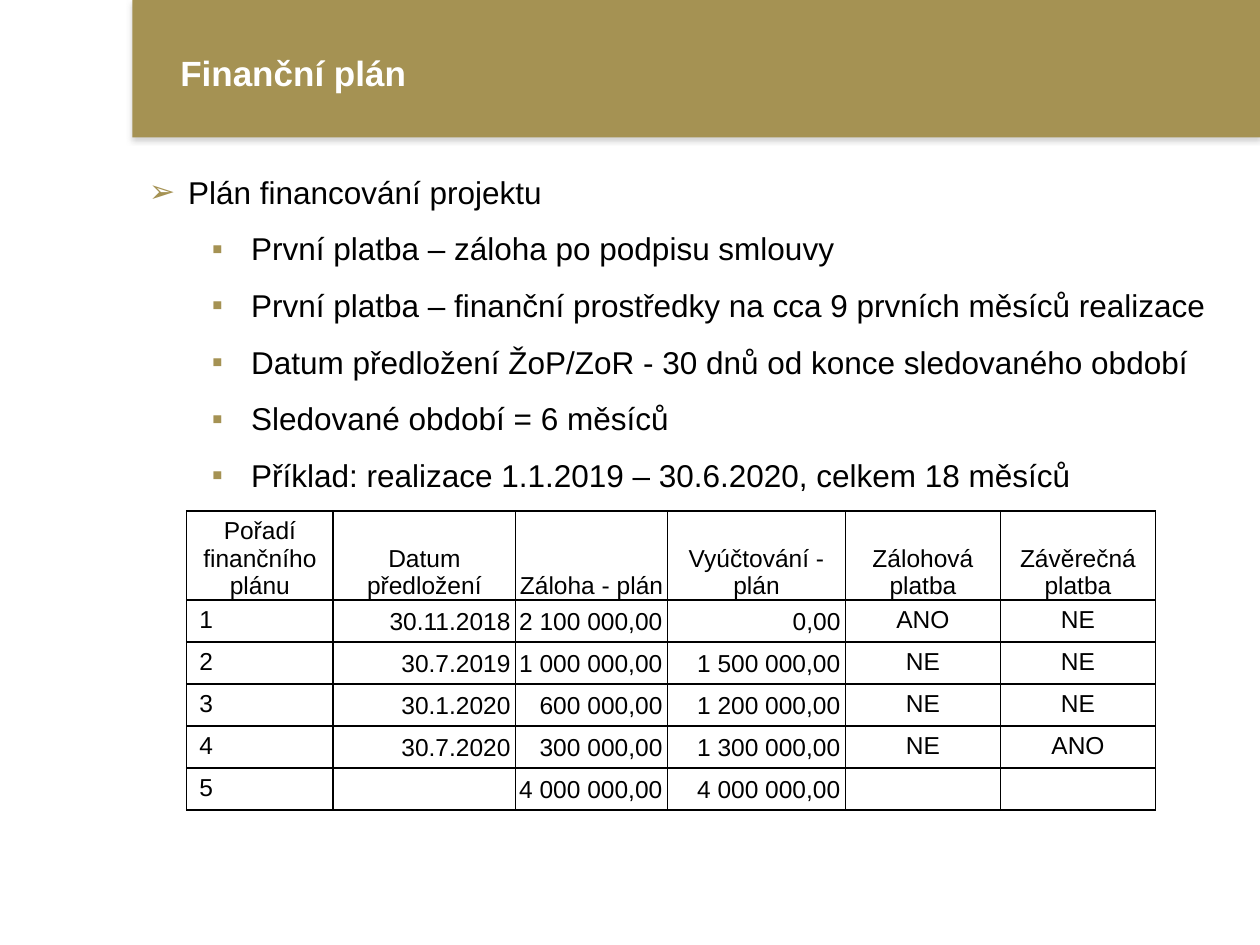
"""Build the financial plan slide with its payment schedule."""
from dataclasses import dataclass

from lxml.etree import SubElement
from pptx import Presentation
from pptx.dml.color import RGBColor
from pptx.enum.shapes import MSO_SHAPE as Shape
from pptx.enum.text import MSO_ANCHOR as Anchor, MSO_AUTO_SIZE as AutoSize, PP_ALIGN as Align
from pptx.oxml.ns import qn
from pptx.util import Pt

GOLD, WHITE, BLACK, GREY = "A59253", "FFFFFF", "000000", "808080"
FONT = "Arial"


@dataclass(frozen=True)
class Bullet:
    text: str
    symbol: str = "▪"
    level: int = 1
    indent: float = 58.5
    spacing: float = 1.5


@dataclass(frozen=True)
class CellStyle:
    align: Align
    anchor: Anchor
    margins: tuple[float, float, float, float]


HEADER = CellStyle(Align.CENTER, Anchor.BOTTOM, (0, 0, 0, 0))
ORDER = CellStyle(Align.LEFT, Anchor.TOP, (7.2, 3.6, 7.2, 3.6))
FLAG = CellStyle(Align.CENTER, Anchor.TOP, (7.2, 3.6, 7.2, 3.6))
NUMBER = CellStyle(Align.RIGHT, Anchor.MIDDLE, (0.72, 0.72, 2.88, 0))
COLUMN_STYLES = (ORDER, NUMBER, NUMBER, NUMBER, FLAG, FLAG)
COLUMN_WIDTHS = (83.7, 104.3, 86.8, 101.7, 88.6, 88.6)
HEADER_HEIGHT, ROW_HEIGHT = 51, 24

BULLETS = (
    Bullet("Plán financování projektu", "➢", 0, 22.5, 1.0),
    Bullet("První platba – záloha po podpisu smlouvy"),
    Bullet("První platba – finanční prostředky na cca 9 prvních měsíců realizace"),
    Bullet("Datum předložení ŽoP/ZoR - 30 dnů od konce sledovaného období"),
    Bullet("Sledované období = 6 měsíců"),
    Bullet("Příklad: realizace 1.1.2019 – 30.6.2020, celkem 18 měsíců"),
)
SCHEDULE = (
    ("Pořadí finančního plánu", "Datum předložení", "Záloha - plán",
     "Vyúčtování - plán", "Zálohová platba", "Závěrečná platba"),
    ("1", "30.11.2018", "2 100 000,00", "0,00", "ANO", "NE"),
    ("2", "30.7.2019", "1 000 000,00", "1 500 000,00", "NE", "NE"),
    ("3", "30.1.2020", "600 000,00", "1 200 000,00", "NE", "NE"),
    ("4", "30.7.2020", "300 000,00", "1 300 000,00", "NE", "ANO"),
    ("5", "", "4 000 000,00", "4 000 000,00", "", ""),
)


def color(value: str) -> RGBColor:
    return RGBColor.from_string(value)


def add_color(parent, value: str):
    return SubElement(parent, qn("a:srgbClr"), val=value)


def style_runs(para, size: float, value: str, bold: bool = False) -> None:
    for span in para.runs:
        span.font.name, span.font.size, span.font.bold = FONT, Pt(size), bold
        span.font.color.rgb = color(value)


def place(shape, left: float, top: float, width: float, height: float) -> None:
    shape.left, shape.top, shape.width, shape.height = map(Pt, (left, top, width, height))


def add_banner(page) -> None:
    banner = page.shapes.add_shape(Shape.RECTANGLE, Pt(75.6), Pt(0), Pt(644.4), Pt(78.5))
    banner.fill.solid()
    banner.fill.fore_color.rgb = color(GOLD)
    banner.line.fill.background()
    effects = SubElement(banner._element.spPr, qn("a:effectLst"))
    shadow = SubElement(effects, qn("a:outerShdw"), blurRad=str(Pt(3.1)), dist=str(Pt(1.8)),
                        dir="5400000", algn="t", rotWithShape="0")
    SubElement(add_color(shadow, GREY), qn("a:alpha"), val="35000")
    page.shapes._spTree.insert(2, banner._element)


def fill_title(title, text: str) -> None:
    place(title, 95.8, 28.8, 588.2, 25.2)
    frame = title.text_frame
    frame.text = text
    frame.auto_size, frame.vertical_anchor = AutoSize.NONE, Anchor.MIDDLE
    frame.paragraphs[0].alignment = Align.LEFT
    style_runs(frame.paragraphs[0], 20, WHITE, bold=True)


def format_bullet(para, bullet: Bullet) -> None:
    props = para._p.get_or_add_pPr()
    props.set("marL", str(Pt(bullet.indent)))
    props.set("indent", str(-Pt(22.5)))
    add_color(SubElement(props, qn("a:buClr")), GOLD)
    SubElement(props, qn("a:buFont"), typeface=FONT)
    SubElement(props, qn("a:buChar"), char=bullet.symbol)
    para.level, para.line_spacing = bullet.level, bullet.spacing
    para.space_before = para.space_after = Pt(0)
    style_runs(para, 18, BLACK)


def fill_body(body, bullets: tuple[Bullet, ...]) -> None:
    place(body, 77.8, 95, 636.5, 301.7)
    frame = body.text_frame
    frame.text = "\n".join(bullet.text for bullet in bullets)
    frame.auto_size, frame.vertical_anchor = AutoSize.NONE, Anchor.TOP
    for para, bullet in zip(frame.paragraphs, bullets):
        format_bullet(para, bullet)


def format_cell(cell, text: str, style: CellStyle) -> None:
    cell.text = text
    cell.vertical_anchor = style.anchor
    (cell.margin_left, cell.margin_top,
     cell.margin_right, cell.margin_bottom) = map(Pt, style.margins)
    for side in ("lnL", "lnR", "lnT", "lnB"):
        border = SubElement(cell._tc.get_or_add_tcPr(), qn(f"a:{side}"), w=str(Pt(1)))
        add_color(SubElement(border, qn("a:solidFill")), BLACK)
    cell.fill.solid()
    cell.fill.fore_color.rgb = color(WHITE)
    para = cell.text_frame.paragraphs[0]
    para.alignment = style.align
    style_runs(para, 14, BLACK)


def add_schedule(page, rows: tuple[tuple[str, ...], ...]) -> None:
    height = HEADER_HEIGHT + ROW_HEIGHT * (len(rows) - 1)
    table = page.shapes.add_table(len(rows), len(COLUMN_WIDTHS), Pt(106.7), Pt(292),
                                  Pt(sum(COLUMN_WIDTHS)), Pt(height)).table
    table.first_row = table.horz_banding = False
    for column, width in zip(table.columns, COLUMN_WIDTHS):
        column.width = Pt(width)
    for index, texts in enumerate(rows):
        table.rows[index].height = Pt(ROW_HEIGHT if index else HEADER_HEIGHT)
        for cell, text, style in zip(table.rows[index].cells, texts, COLUMN_STYLES):
            format_cell(cell, text, (style if text else NUMBER) if index else HEADER)


def main() -> None:
    deck = Presentation()
    deck.slide_width, deck.slide_height = Pt(720), Pt(540)
    page = deck.slides.add_slide(deck.slide_layouts[1])
    add_banner(page)
    fill_title(page.shapes.title, "Finanční plán")
    fill_body(page.placeholders[1], BULLETS)
    add_schedule(page, SCHEDULE)
    deck.save("out.pptx")


if __name__ == "__main__":
    main()
